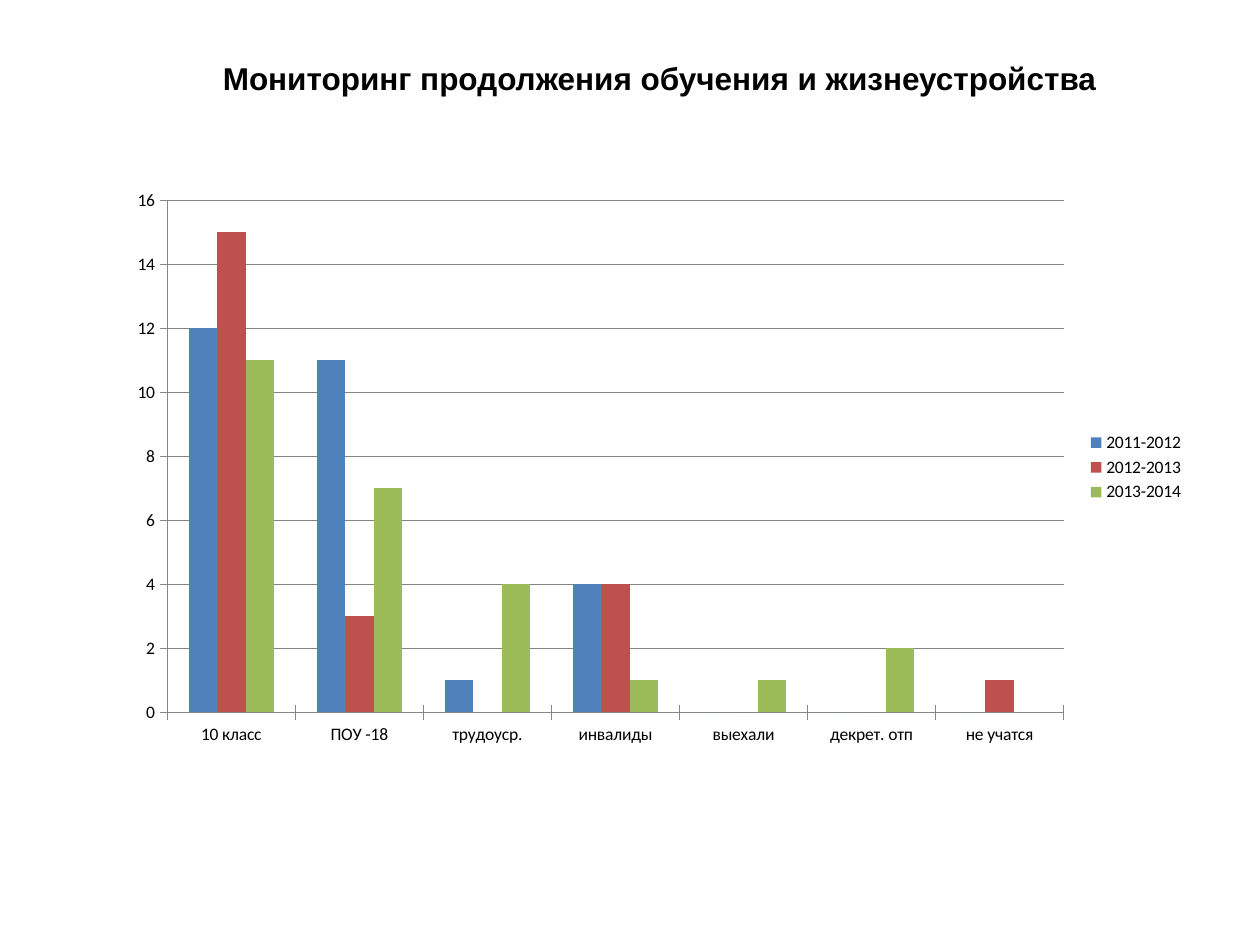
from pptx import Presentation
from pptx.chart.data import CategoryChartData
from pptx.dml.color import RGBColor
from pptx.enum.chart import XL_CHART_TYPE, XL_LEGEND_POSITION, XL_TICK_MARK
from pptx.util import Inches, Pt


def paint(code):
    return RGBColor.from_string(code)


class Deck:
    ink = "000000"
    rule = "868686"

    def __init__(self, slide):
        self.slide = slide

    def style(self, font, name, size, bold=False):
        font.name, font.size, font.bold = name, Pt(size), bold
        font.color.rgb = paint(self.ink)

    def title(self, text, x, y, w, h):
        box = self.slide.shapes.add_textbox(Inches(x), Inches(y), Inches(w), Inches(h))
        frame = box.text_frame
        frame.word_wrap = True
        frame.text = text
        self.style(frame.paragraphs[0].runs[0].font, "Arial", 18, True)

    def chart(self, cats, rows, x, y, w, h):
        data = CategoryChartData()
        data.categories = cats
        for name, vals, _ in rows:
            data.add_series(name, vals)
        chart = self.slide.shapes.add_chart(
            XL_CHART_TYPE.COLUMN_CLUSTERED,
            Inches(x), Inches(y), Inches(w), Inches(h), data).chart
        self.style(chart.font, "Calibri", 10)
        chart.has_title = False

        # Columns
        plot = chart.plots[0]
        plot.gap_width, plot.overlap = 150, 0
        plot.vary_by_categories = False
        for bars, (_, _, color) in zip(plot.series, rows):
            bars.format.fill.solid()
            bars.format.fill.fore_color.rgb = paint(color)

        # Axes and grid
        for axis in (chart.category_axis, chart.value_axis):
            axis.major_tick_mark = XL_TICK_MARK.CROSS
            axis.minor_tick_mark = XL_TICK_MARK.NONE
            self.line(axis.format.line)
        scale = chart.value_axis
        scale.minimum_scale, scale.maximum_scale, scale.major_unit = 0, 16, 2
        scale.has_major_gridlines = True
        self.line(scale.major_gridlines.format.line)

        # Legend
        chart.has_legend = True
        chart.legend.position = XL_LEGEND_POSITION.RIGHT
        chart.legend.include_in_layout = False

    def line(self, line):
        line.color.rgb = paint(self.rule)
        line.width = Pt(0.75)


def main():
    show = Presentation()
    show.slide_width, show.slide_height = Inches(10), Inches(7.5)
    deck = Deck(show.slides.add_slide(show.slide_layouts[6]))

    # Heading
    deck.title("Мониторинг продолжения обучения и жизнеустройства",
               1.67, 0.42, 7.25, 0.71)

    # Outcomes by school year
    cats = ["10 класс", "ПОУ -18", "трудоуср.", "инвалиды",
            "выехали", "декрет. отп", "не учатся"]
    rows = [
        ("2011-2012", (12, 11, 1, 4, 0, 0, 0), "4F81BD"),
        ("2012-2013", (15, 3, None, 4, 0, 0, 1), "C0504D"),
        ("2013-2014", (11, 7, 4, 1, 1, 2, None), "9BBB59"),
    ]
    deck.chart(cats, rows, 0.92, 1.42, 8.58, 4.58)

    show.save("out.pptx")


if __name__ == "__main__":
    main()
